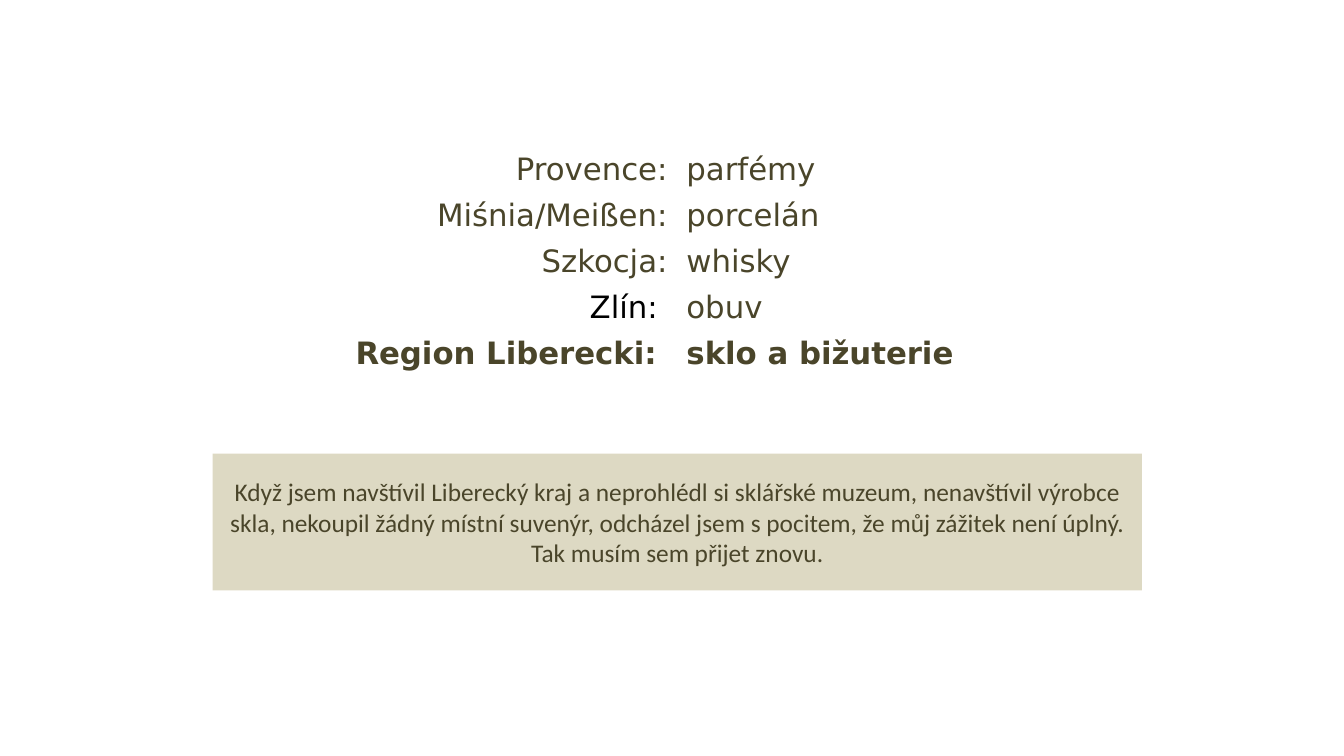
from dataclasses import dataclass

import pptx
import pptx.dml.color
import pptx.enum.shapes
import pptx.enum.text
import pptx.util

Cm = pptx.util.Cm
Align = pptx.enum.text.PP_ALIGN


@dataclass(frozen=True)
class Theme:
    olive: str = "4A452A"
    black: str = "000000"
    sand: str = "DDD9C3"
    region_font: str = "DejaVu Sans"
    quote_font: str = "Calibri"
    region_size: float = 22
    quote_size: float = 18.1


@dataclass(frozen=True)
class Region:
    place: str
    product: str
    place_color: str = Theme.olive
    bold: bool = False


THEME = Theme()
REGIONS = [
    Region("Provence:", "parfémy"),
    Region("Miśnia/Meißen:", "porcelán"),
    Region("Szkocja:", "whisky"),
    Region("Zlín: ", "obuv", place_color=THEME.black),
    Region("Region Liberecki: ", "sklo a bižuterie", bold=True),
]
QUOTE = (
    "Když jsem navštívil Liberecký kraj a neprohlédl si sklářské muzeum, "
    "nenavštívil výrobce skla, nekoupil žádný místní suvenýr, odcházel jsem "
    "s pocitem, že můj zážitek není úplný. Tak musím sem přijet znovu."
)


def write(frame, text: str, *, font: str, size: float, color: str = THEME.olive,
          align: Align = Align.LEFT, bold: bool = False) -> None:
    paragraph = frame.paragraphs[0]
    paragraph.alignment = align
    run = paragraph.add_run()
    run.text = text
    run.font.name = font
    run.font.size = pptx.util.Pt(size)
    run.font.bold = bold
    run.font.color.rgb = pptx.dml.color.RGBColor.from_string(color)


def draw_regions(slide, regions: list[Region]) -> None:
    row_height = Cm(1.16)
    table = slide.shapes.add_table(
        len(regions), 2, Cm(8.08), Cm(3.71), Cm(17.96), row_height * len(regions)
    ).table
    table.first_row = False
    table.horz_banding = False
    for row, region in enumerate(regions):
        table.rows[row].height = row_height
        entries = [
            (region.place, region.place_color, Align.RIGHT),
            (region.product, THEME.olive, Align.LEFT),
        ]
        for column, (text, color, align) in enumerate(entries):
            cell = table.cell(row, column)
            cell.fill.background()
            cell.margin_left = cell.margin_right = Cm(0.24)
            write(cell.text_frame, text, font=THEME.region_font,
                  size=THEME.region_size, color=color, align=align,
                  bold=region.bold)


def draw_quote(slide, text: str) -> None:
    quote = slide.shapes.add_shape(
        pptx.enum.shapes.MSO_SHAPE.RECTANGLE, Cm(5.36), Cm(11.43), Cm(23.42), Cm(3.45)
    )
    quote.shadow.inherit = False
    quote.fill.solid()
    quote.fill.fore_color.rgb = pptx.dml.color.RGBColor.from_string(THEME.sand)
    quote.line.fill.background()
    quote.text_frame.word_wrap = True
    quote.text_frame.vertical_anchor = pptx.enum.text.MSO_ANCHOR.MIDDLE
    write(quote.text_frame, text, font=THEME.quote_font, size=THEME.quote_size,
          align=Align.CENTER)


def main() -> None:
    deck = pptx.Presentation()
    deck.slide_width, deck.slide_height = Cm(33.87), Cm(19.05)
    slide = deck.slides.add_slide(deck.slide_layouts[6])
    draw_regions(slide, REGIONS)
    draw_quote(slide, QUOTE)
    deck.save("out.pptx")


if __name__ == "__main__":
    main()
